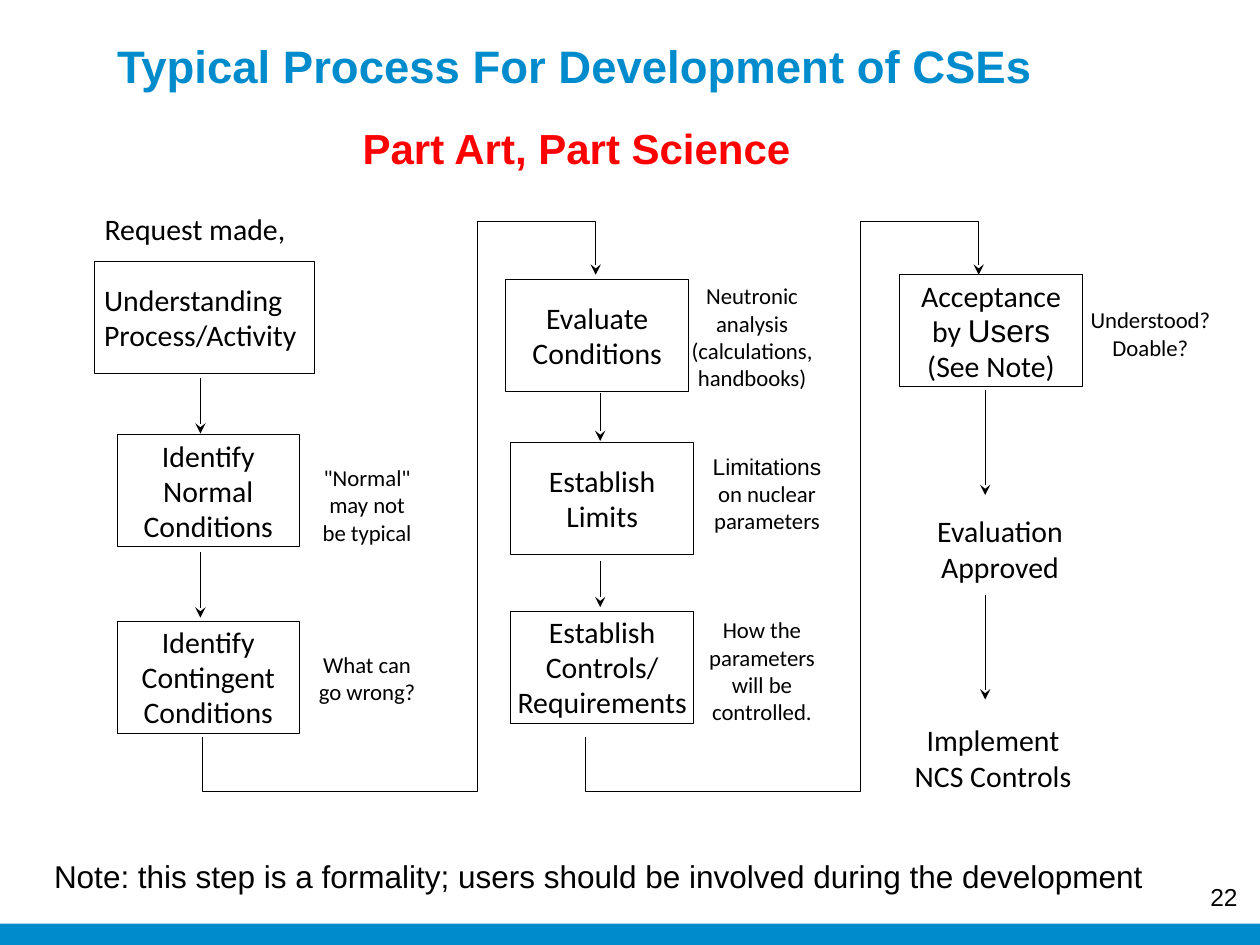
from lxml import etree
from pptx import Presentation
from pptx.dml.color import RGBColor
from pptx.enum import shapes, text
from pptx.oxml import ns
from pptx.util import Cm, Pt

BLUE, RED, BLACK = "008CCC", "FF0000", "000000"
LEFT, CENTER, RIGHT = text.PP_ALIGN.LEFT, text.PP_ALIGN.CENTER, text.PP_ALIGN.RIGHT
TOP, MIDDLE = text.MSO_ANCHOR.TOP, text.MSO_ANCHOR.MIDDLE
STEP_W, STEP_H = 3.68, 2.26
NOTE_W = 3.2


def rgb(value):
    return RGBColor.from_string(value)


def write(frame, lines, size, font="Calibri", color=BLACK, bold=False,
          align=CENTER, anchor=TOP, inset=0, pitch=None, wrap=True):
    """Fill a frame; a line is a string or a list of (text, font, size) runs."""
    frame.word_wrap = wrap
    frame.vertical_anchor = anchor
    frame.margin_left = frame.margin_right = Cm(inset)
    frame.margin_top = frame.margin_bottom = 0
    for index, line in enumerate(lines):
        paragraph = frame.add_paragraph() if index else frame.paragraphs[0]
        paragraph.alignment = align
        if pitch:
            paragraph.line_spacing = Pt(pitch)
        runs = [(line, font, size)] if isinstance(line, str) else line
        for words, run_font, run_size in runs:
            run = paragraph.add_run()
            run.text = words
            run.font.name = run_font
            run.font.size = Pt(run_size)
            run.font.bold = bold
            run.font.color.rgb = rgb(color)


def label(slide, left, top, width, height, lines, size, **style):
    box = slide.shapes.add_textbox(Cm(left), Cm(top), Cm(width), Cm(height))
    write(box.text_frame, lines, size, **style)


def centred_label(slide, center, top, lines, size):
    label(slide, center - NOTE_W / 2, top, NOTE_W, len(lines) * size * 0.043,
          lines, size)


def step(slide, left, top, lines, width=STEP_W, align=CENTER, inset=0):
    box = slide.shapes.add_shape(shapes.MSO_SHAPE.RECTANGLE,
                                 Cm(left), Cm(top), Cm(width), Cm(STEP_H))
    box.shadow.inherit = False
    box.fill.background()
    box.line.color.rgb = rgb(BLACK)
    box.line.width = Pt(0.5)
    write(box.text_frame, lines, 17, align=align, anchor=MIDDLE,
          inset=inset, pitch=20)


def finish_arrow(arrow):
    arrow.line.color.rgb = rgb(BLACK)
    arrow.line.width = Pt(0.5)
    etree.SubElement(arrow.line._get_or_add_ln(), ns.qn("a:tailEnd"), type="stealth")


def down_arrow(slide, x, top, bottom):
    arrow = slide.shapes.add_connector(shapes.MSO_CONNECTOR.STRAIGHT,
                                       Cm(x), Cm(top), Cm(x), Cm(bottom))
    finish_arrow(arrow)
    etree.SubElement(arrow._element.spPr, ns.qn("a:effectLst"))


def next_column_arrow(slide, left, top):
    """Lead from the foot of one column up and over to the head of the next."""
    bends = [(0, 1.09), (5.54, 1.09), (5.54, -10.39), (7.92, -10.39), (7.92, -9.32)]
    builder = slide.shapes.build_freeform(Cm(left), Cm(top))
    builder.add_line_segments([(Cm(left + x), Cm(top + y)) for x, y in bends],
                              close=False)
    route = builder.convert_to_shape()
    route.shadow.inherit = False
    route.fill.background()
    finish_arrow(route)


def column(slide, left, top, steps, notes, arrow_x, arrows):
    for x, y, lines in steps:
        step(slide, left + x, top + y, lines)
    for center, y, size, lines in notes:
        centred_label(slide, left + center, top + y, lines, size)
    for start, end in arrows:
        down_arrow(slide, left + arrow_x, top + start, top + end)


def understanding_column(slide, left, top):
    label(slide, left + 0.21, top - 0.76, 4.2, 0.74, ["Request made,"], 17, align=LEFT)
    step(slide, left, top + 0.28, ["Understanding", "Process/Activity"],
         width=4.45, align=LEFT, inset=0.2)
    column(slide, left, top,
           [(0.46, 3.76, ["Identify", "Normal", "Conditions"]),
            (0.46, 7.52, ["Identify", "Contingent", "Conditions"])],
           [(5.5, 4.35, 13, ['"Normal"', "may not", "be typical"]),
            (5.5, 8.11, 13, ["What can", "go wrong?"])],
           2.14, [(2.62, 3.74), (6.13, 7.45)])


def evaluation_column(slide, left, top):
    column(slide, left, top,
           [(0, 0.64, ["Evaluate", "Conditions"]),
            (0.1, 3.92, ["Establish", "Limits"]),
            (0.1, 7.32, ["Establish", "Controls/", "Requirements"])],
           [(4.96, 0.69, 13, ["Neutronic", "analysis", "(calculations,", "handbooks)"]),
            (5.26, 4.12, 13, [[("Limitations", "Arial", 13)], "on nuclear", "parameters"]),
            (5.16, 7.42, 13, ["How the", "parameters", "will be", "controlled."])],
           1.9, [(2.92, 3.89), (6.3, 7.24)])


def acceptance_column(slide, left, top):
    by_users = [("by ", "Calibri", 17), ("Users", "Arial", 18)]
    column(slide, left, top,
           [(0.04, 0.54, ["Acceptance", by_users, "(See Note)"])],
           [(5.09, 1.17, 13, ["Understood?", "Doable?"]),
            (2.06, 5.34, 17, ["Evaluation", "Approved"]),
            (1.92, 9.55, 17, ["Implement", "NCS Controls"])],
           1.76, [(2.87, 4.98), (6.99, 9.1)])


def heading(slide, left, top):
    label(slide, left, top, 20.96, 1.37, ["Typical Process For Development of CSEs"],
          26, font="Arial", color=BLUE, bold=True, align=LEFT, anchor=MIDDLE, inset=0.25)
    label(slide, left + 4.95, top + 1.7, 13.03, 1.27, ["Part Art, Part Science"],
          24, font="Arial", color=RED, bold=True, align=LEFT, anchor=MIDDLE, inset=0.25)


def footer(slide, left, top, width):
    label(slide, left + 0.84, top, 22.5, 1.02,
          ["Note: this step is a formality; users should be involved during the development"],
          18, font="Arial", align=LEFT, anchor=MIDDLE, inset=0.25, wrap=False)
    label(slide, left + 23.93, top + 0.43, 1.27, 1.02, ["22"], 14,
          font="Arial", align=RIGHT, anchor=MIDDLE, inset=0.25)
    band = slide.shapes.add_shape(shapes.MSO_SHAPE.RECTANGLE,
                                  Cm(left), Cm(top + 1.48), Cm(width), Cm(0.43))
    band.shadow.inherit = False
    band.fill.solid()
    band.fill.fore_color.rgb = rgb(BLUE)
    band.line.fill.background()


def main():
    deck = Presentation()
    deck.slide_width, deck.slide_height = Cm(25.4), Cm(19.05)
    slide = deck.slides.add_slide(deck.slide_layouts[6])
    heading(slide, 2.11, 0.64)
    understanding_column(slide, 1.9, 5)
    evaluation_column(slide, 10.2, 5)
    acceptance_column(slide, 18.1, 5)
    for start in (4.09, 11.81):
        next_column_arrow(slide, start, 14.86)
    footer(slide, 0, 17.14, 25.4)
    deck.save("out.pptx")


if __name__ == "__main__":
    main()
